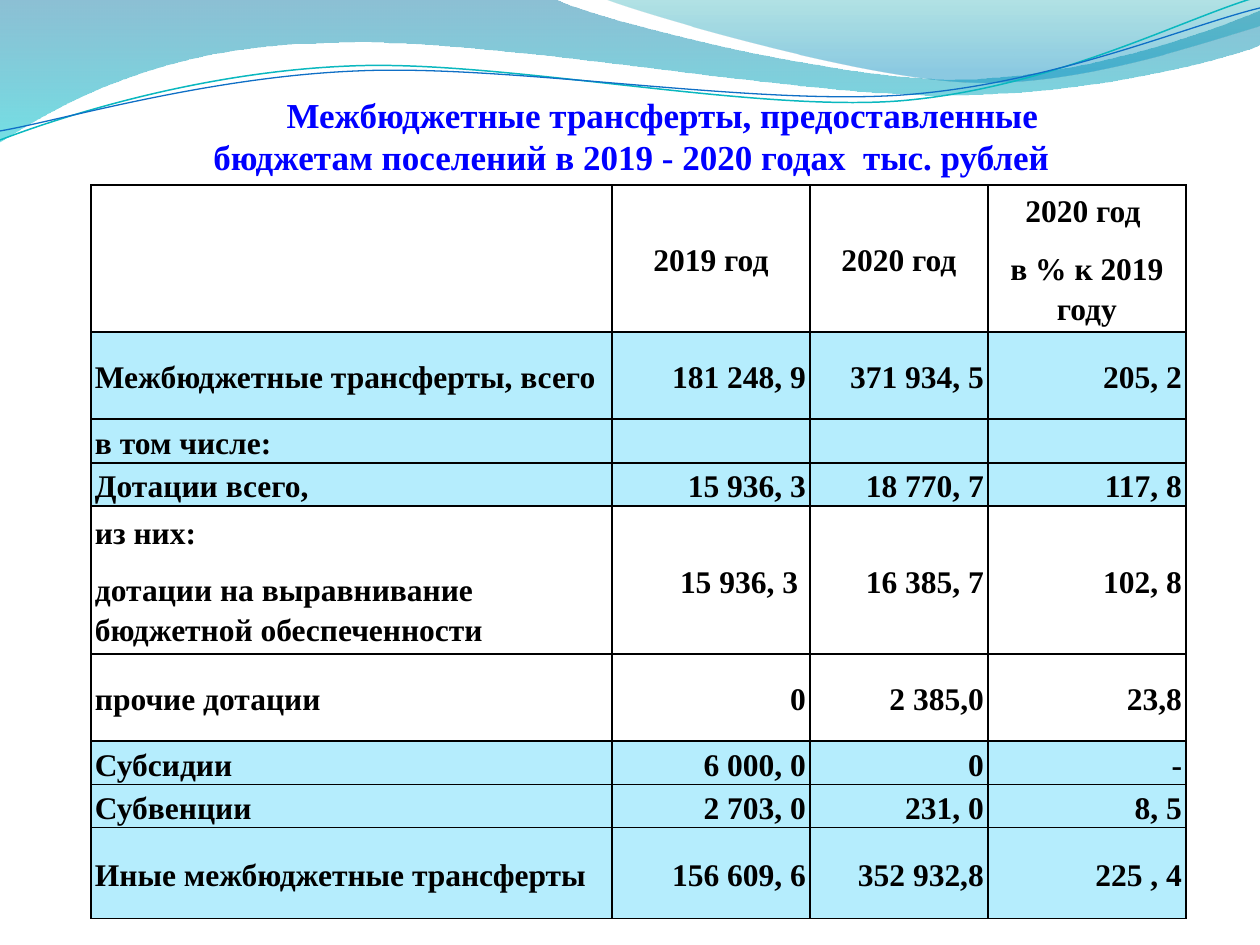
from lxml import etree
from pptx import Presentation
from pptx.dml.color import RGBColor
from pptx.enum.text import MSO_ANCHOR, MSO_AUTO_SIZE, PP_ALIGN
from pptx.oxml.ns import qn
from pptx.util import Emu, Pt

LEFT, MID, RIGHT = PP_ALIGN.LEFT, PP_ALIGN.CENTER, PP_ALIGN.RIGHT
CENTRE = MSO_ANCHOR.MIDDLE
FIXED = MSO_AUTO_SIZE.NONE
FONT = "Times New Roman"
TINT = "B5EDFD"

TITLE = "Межбюджетные трансферты, предоставленные бюджетам поселений в 2019 - 2020 годах  тыс. рублей"
COLS = [521, 198, 178, 198]
ROWS = [
    (147, None, ["", "2019 год", "2020 год", "2020 год \nв % к 2019 году"]),
    (87, TINT, ["Межбюджетные трансферты, всего", "181 248, 9", "371 934, 5", "205, 2"]),
    (44, TINT, ["в том числе:", "", "", ""]),
    (43, TINT, ["Дотации всего,", "15 936, 3", "18 770, 7", "117, 8"]),
    (148, None, ["из них:\nдотации на выравнивание бюджетной обеспеченности",
                 "15 936, 3 ", "16 385, 7", "102, 8"]),
    (87, None, ["прочие дотации", "0", "2 385,0", "23,8"]),
    (44, TINT, ["Субсидии", "6 000, 0", "0", "-"]),
    (43, TINT, ["Субвенции", "2 703, 0", "231, 0", "8, 5"]),
    (91, TINT, ["Иные межбюджетные трансферты", "156 609, 6", "352 932,8", "225 , 4"]),
]

BAND = [(0, 0), (554, -1), (600, 21, 837, 79, 955, 79), (1075, 79, 1207, 33, 1260, 11),
        (1261, 45), (1239, 55, 1096, 96, 940, 95), (784, 95, 481, 35, 324, 43),
        (163, 45, 58, 105, -1, 142)]
CREST = [(604, -1), (641, 14, 859, 78, 969, 82), (1079, 87, 1211, 40, 1260, 26), (1260, 0)]
TEAL = [(0, 140), (60, 117, 199, 72, 349, 66), (498, 59, 747, 112, 898, 101),
        (1050, 89, 1182, 19, 1257, -3)]
BLUE = [(0, 131), (59, 121, 207, 77, 357, 71), (508, 64, 752, 106, 903, 95),
        (1053, 84, 1186, 26, 1260, 8)]


def px(n):
    return Emu(round(n * 914400 / 126))


def rgb(code):
    return RGBColor.from_string(code)


def put(frame, text, size=18, color="000000", align=LEFT, line=None, after=None, indent=None):
    frame.text = text
    frame.word_wrap = True
    for para in frame.paragraphs:
        para.alignment = align
        para.line_spacing = line
        para.space_after = after
        if indent:
            para._p.get_or_add_pPr().set("indent", str(px(indent)))
        for run in para.runs:
            run.font.name = FONT
            run.font.size = Pt(size)
            run.font.bold = True
            run.font.color.rgb = rgb(color)


def bend(shape, path):
    nodes = list(shape.element.spPr.iter(qn("a:lnTo")))
    for step in path[1:]:
        count = len(step) // 2
        group, nodes = nodes[:count], nodes[count:]
        if count == 3:
            curve = etree.Element(qn("a:cubicBezTo"))
            group[0].addprevious(curve)
            for node in group:
                curve.append(node[0])
                node.getparent().remove(node)


def draw(slide, path, close):
    dots = [(px(step[i]), px(step[i + 1])) for step in path for i in range(0, len(step), 2)]
    pen = slide.shapes.build_freeform(*dots[0], scale=1.0)
    pen.add_line_segments(dots[1:], close=close)
    shape = pen.convert_to_shape()
    bend(shape, path)
    shape.shadow.inherit = False
    return shape


def add_wave(slide, path, stops):
    shape = draw(slide, path, True)
    shape.line.fill.background()
    shape.fill.gradient()
    shape.fill.gradient_angle = 270
    for stop, (place, color, _) in zip(shape.fill.gradient_stops, stops):
        stop.position = place
        stop.color.rgb = rgb(color)
    for node, (_, _, alpha) in zip(shape.element.spPr.iter(qn("a:srgbClr")), stops):
        etree.SubElement(node, qn("a:alpha")).set("val", str(alpha * 1000))


def add_curve(slide, path, color, width):
    shape = draw(slide, path, False)
    shape.fill.background()
    shape.line.color.rgb = rgb(color)
    shape.line.width = Pt(width)


def add_title(slide):
    title = slide.shapes.title
    title.left, title.top, title.width, title.height = px(154), px(87), px(955), px(97)
    frame = title.text_frame
    frame.auto_size = FIXED
    frame.vertical_anchor = CENTRE
    put(frame, TITLE, size=20, color="0000FF", align=MID, indent=62)


def set_edge(cell):
    props = cell._tc.get_or_add_tcPr()
    for side in ("lnL", "lnR", "lnT", "lnB"):
        edge = etree.SubElement(props, qn("a:" + side), w=str(Pt(1)))
        fill = etree.SubElement(edge, qn("a:solidFill"))
        etree.SubElement(fill, qn("a:srgbClr"), val="000000")


def fill_cell(cell, text, tint, align):
    set_edge(cell)
    cell.margin_left = cell.margin_right = px(4)
    cell.margin_top = cell.margin_bottom = 0
    cell.vertical_anchor = CENTRE
    if tint:
        cell.fill.solid()
        cell.fill.fore_color.rgb = rgb(tint)
    else:
        cell.fill.background()
    if text:
        put(cell.text_frame, text, align=align, line=1.15, after=Pt(10))


def add_grid(slide):
    high = sum(row[0] for row in ROWS)
    frame = slide.shapes.add_table(len(ROWS), len(COLS), px(91), px(185), px(sum(COLS)), px(high))
    table = frame.table
    table.first_row = table.horz_banding = False
    for col, wide in zip(table.columns, COLS):
        col.width = px(wide)
    for r, (tall, tint, texts) in enumerate(ROWS):
        table.rows[r].height = px(tall)
        for c, text in enumerate(texts):
            align = MID if r == 0 else RIGHT if c else LEFT
            fill_cell(table.cell(r, c), text, tint, align)


def main():
    deck = Presentation()
    deck.slide_width, deck.slide_height = px(1260), px(945)
    slide = deck.slides.add_slide(deck.slide_layouts[5])
    add_wave(slide, BAND, [(0, "0074A1", 45), (1, "00C6CF", 55)])
    add_wave(slide, CREST, [(0, "00A1A9", 30), (0.8, "008BBF", 45)])
    add_curve(slide, TEAL, "0AB8BF", 0.85)
    add_curve(slide, BLUE, "0F6FC6", 0.75)
    add_grid(slide)
    add_title(slide)
    deck.save("out.pptx")


if __name__ == "__main__":
    main()
